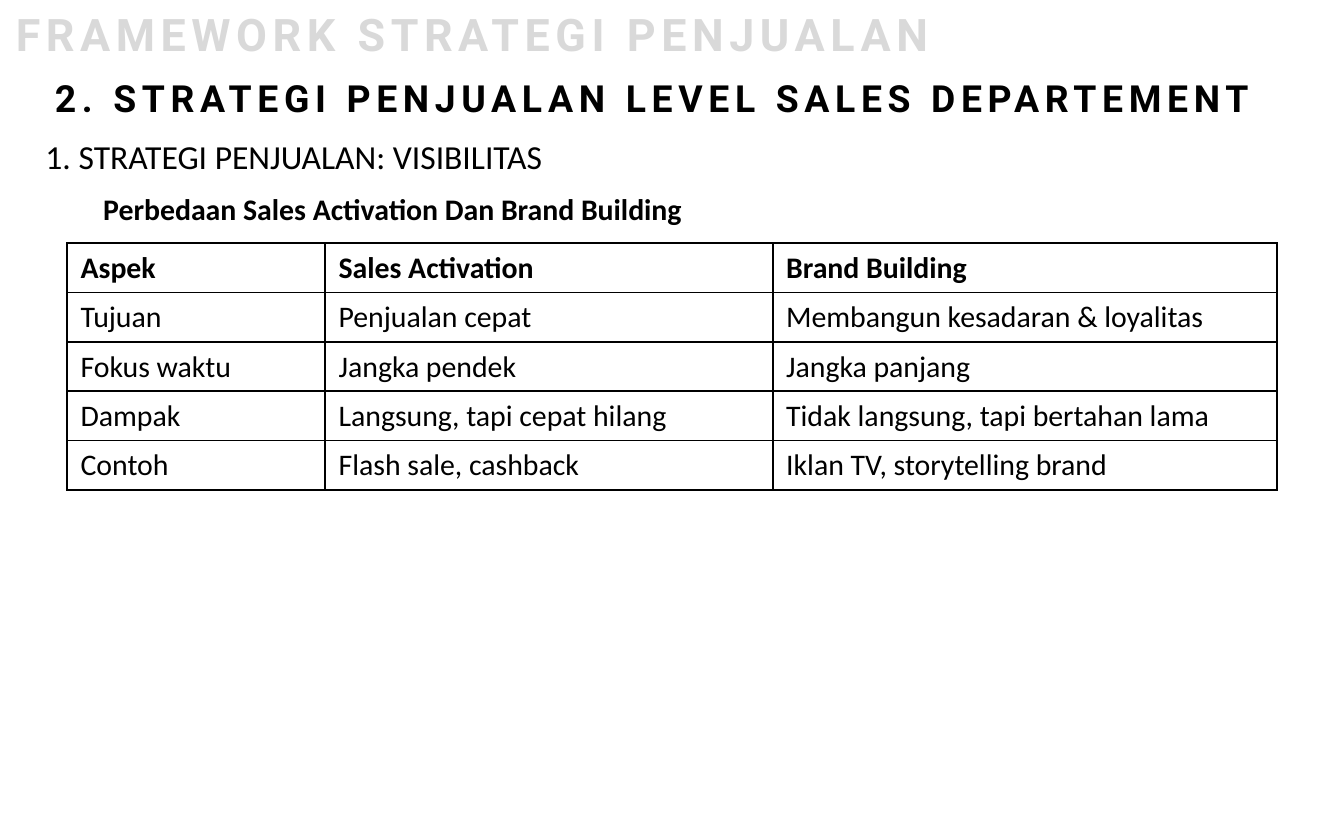
from lxml.etree import SubElement
from pptx import Presentation
from pptx.dml.color import RGBColor
from pptx.enum.text import MSO_ANCHOR
from pptx.oxml.ns import qn
from pptx.util import Pt

PX = 9144  # 100 px to the inch
BLACK = RGBColor(0x00, 0x00, 0x00)
GRAY = RGBColor(0xD9, 0xD9, 0xD9)

HEADINGS = [
    # text, (left, top, width, height), font, size, colour, bold, spacing, wrap
    ("FRAMEWORK STRATEGI PENJUALAN", (2, 0, 1000, 50),
     "Roboto", 24, GRAY, True, 3, True),
    ("2. STRATEGI PENJUALAN LEVEL SALES DEPARTEMENT", (31, 51, 971, 44),
     "Roboto", 20, BLACK, True, 3, True),
    ("1. STRATEGI PENJUALAN: VISIBILITAS", (24, 96, 393, 40),
     "Calibri", 18, BLACK, False, 0, False),
    ("Perbedaan Sales Activation Dan Brand Building", (67, 137, 867, 37),
     "Calibri", 16, BLACK, True, 0, True),
]
ROWS = [
    ("Aspek", "Sales Activation", "Brand Building"),
    ("Tujuan", "Penjualan cepat", "Membangun kesadaran & loyalitas"),
    ("Fokus waktu", "Jangka pendek", "Jangka panjang"),
    ("Dampak", "Langsung, tapi cepat hilang", "Tidak langsung, tapi bertahan lama"),
    ("Contoh", "Flash sale, cashback", "Iklan TV, storytelling brand"),
]
COLUMN_WIDTHS = (192, 333, 375)
ROW_HEIGHT = 36


def set_font(p, name, size, color, bold):
    p.font.name = name
    p.font.size = Pt(size)
    p.font.color.rgb = color
    p.font.bold = bold


def add_borders(cell):
    """Draw a 1 pt black line on all four sides of a cell."""
    tcPr = cell._tc.get_or_add_tcPr()
    for i, side in enumerate(("a:lnL", "a:lnR", "a:lnT", "a:lnB")):
        ln = tcPr.makeelement(qn(side), {"w": str(Pt(1))})
        fill = SubElement(ln, qn("a:solidFill"))
        SubElement(fill, qn("a:srgbClr"), val=str(BLACK))
        tcPr.insert(i, ln)


prs = Presentation()
prs.slide_width = 1000 * PX
prs.slide_height = 625 * PX
s = prs.slides.add_slide(prs.slide_layouts[6])

for text, box, name, size, color, bold, spacing, wrap in HEADINGS:
    tf = s.shapes.add_textbox(*(v * PX for v in box)).text_frame
    tf.word_wrap = wrap
    p = tf.paragraphs[0]
    r = p.add_run()
    r.text = text
    set_font(p, name, size, color, bold)
    if spacing:
        r._r.get_or_add_rPr().set("spc", str(spacing * 100))

table = s.shapes.add_table(
    len(ROWS), len(COLUMN_WIDTHS), 50 * PX, 181 * PX,
    sum(COLUMN_WIDTHS) * PX, len(ROWS) * ROW_HEIGHT * PX).table
table.first_row = False
table.horz_banding = False
for column, width in zip(table.columns, COLUMN_WIDTHS):
    column.width = width * PX

for i, row in enumerate(ROWS):
    for j, text in enumerate(row):
        cell = table.cell(i, j)
        cell.text = text
        cell.vertical_anchor = MSO_ANCHOR.MIDDLE
        cell.fill.background()
        add_borders(cell)
        set_font(cell.text_frame.paragraphs[0], "Calibri", 16, BLACK, i == 0)

prs.save("out.pptx")
